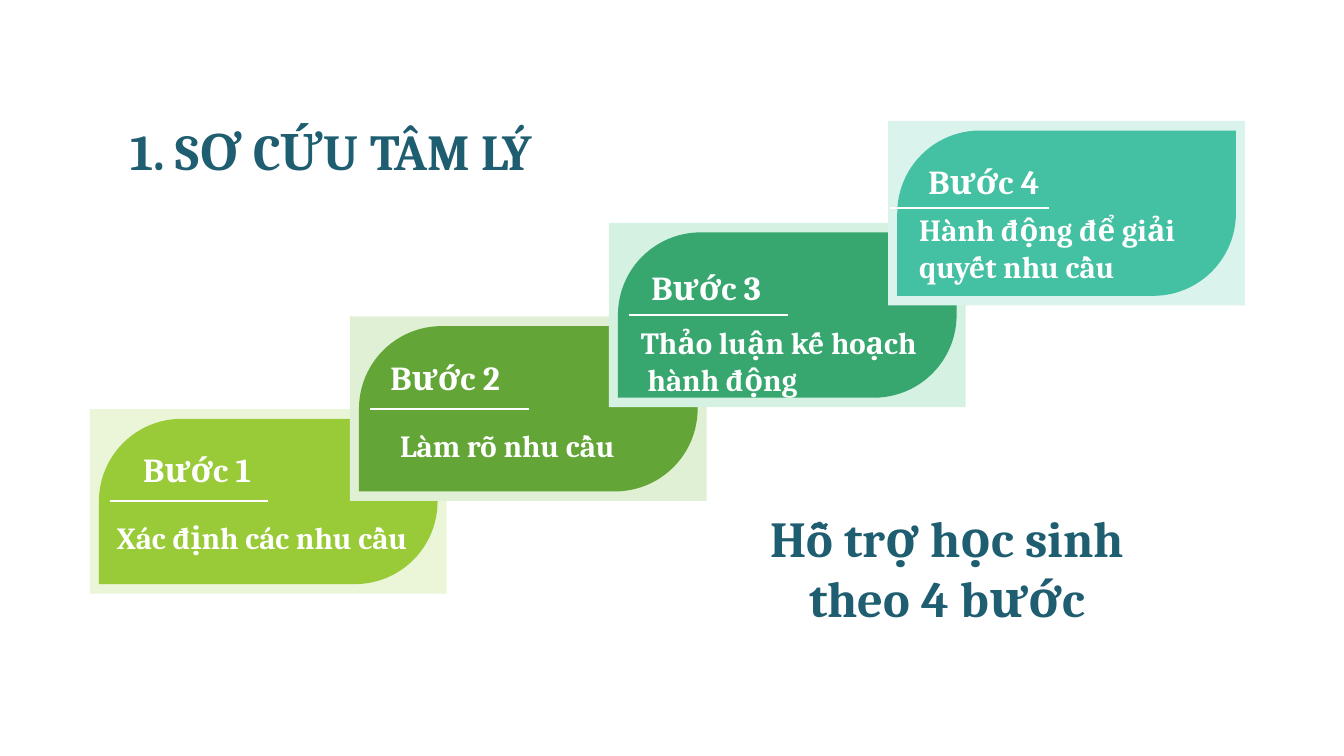
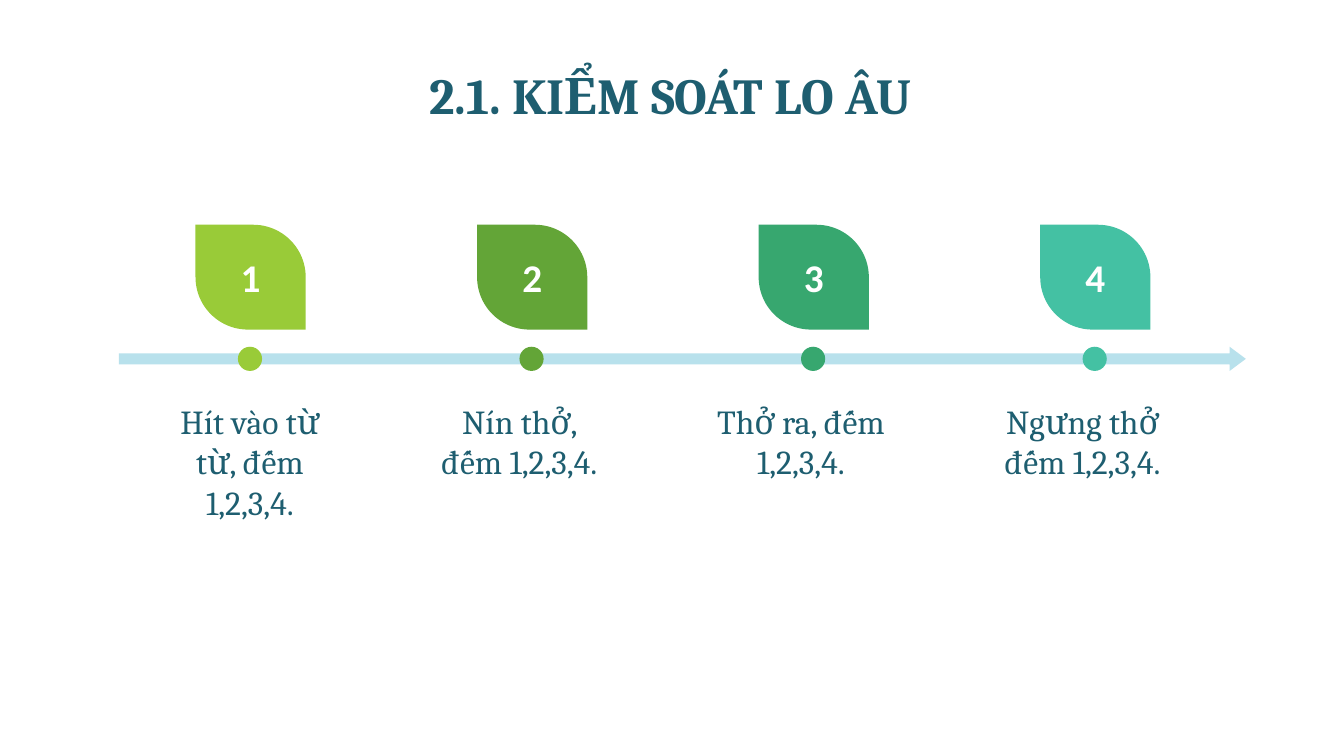
from dataclasses import dataclass

from lxml import etree
from pptx import Presentation
from pptx.dml.color import RGBColor
from pptx.enum.shapes import MSO_CONNECTOR, MSO_SHAPE
from pptx.enum.text import MSO_ANCHOR, PP_ALIGN
from pptx.oxml.ns import qn
from pptx.util import Inches, Pt

LEAF = MSO_SHAPE.ROUND_2_DIAG_RECTANGLE
DOT = MSO_SHAPE.OVAL
ARROW = MSO_SHAPE.RIGHT_ARROW
STRAIGHT = MSO_CONNECTOR.STRAIGHT
LEFT, CENTER = PP_ALIGN.LEFT, PP_ALIGN.CENTER
TOP, MIDDLE = MSO_ANCHOR.TOP, MSO_ANCHOR.MIDDLE


@dataclass(frozen=True)
class Theme:
    serif: str = "Cambria"
    sans: str = "Calibri"
    ink: str = "1E5E70"
    white: str = "FFFFFF"
    axis: str = "B8E1EC"
    steps: tuple = ("99CB38", "63A537", "37A76F", "44C1A3")
    panels: tuple = ("EBF5D7", "DFF0D4", "D4F1E2", "DAF3ED")
    title: int = 36
    number: int = 28
    label: int = 24
    body: int = 22


theme = Theme()
prs = Presentation()
prs.slide_width, prs.slide_height = Inches(13.33), Inches(7.5)
# All lengths below are percentages of the slide's width and height.
COL, ROW = prs.slide_width / 100, prs.slide_height / 100
BLANK = prs.slide_layouts[6]


def add_block(slide, kind, x, y, w, h, fill, adjustments=()):
    """Add a flat, unlined preset shape."""
    sp = slide.shapes.add_shape(kind, int(x * COL), int(y * ROW), int(w * COL), int(h * ROW))
    sp.shadow.inherit = False
    sp.fill.solid()
    sp.fill.fore_color.rgb = RGBColor.from_string(fill)
    sp.line.fill.background()
    for i, value in enumerate(adjustments):
        sp.adjustments[i] = value
    return sp


def add_text(slide, text, x, y, w, h, size, color, bold=True, align=CENTER, anchor=TOP):
    """Add a wrapped text box and return its text frame."""
    tf = slide.shapes.add_textbox(int(x * COL), int(y * ROW), int(w * COL), int(h * ROW)).text_frame
    tf.word_wrap = True
    tf.vertical_anchor = anchor
    tf.text = text
    for p in tf.paragraphs:
        p.alignment = align
        for r in p.runs:
            r.font.name, r.font.size, r.font.bold = theme.serif, Pt(size), bold
            r.font.color.rgb = RGBColor.from_string(color)
    return tf


# Titles
titles = [
    ("1. SƠ CỨU TÂM LÝ", 7.4, 15.07, 34.5),
    ("2.1. KIỂM SOÁT LO ÂU", 2.4, 7.73, 94.95),
]
for text, x, y, w in titles:
    slide = prs.slides.add_slide(BLANK)
    p = add_text(slide, text, x, y, w, 10.53, theme.title, theme.ink, anchor=MIDDLE).paragraphs[0]
    p.line_spacing = 0.9
    p.space_before = Pt(10)
staircase, timeline = prs.slides

# Staircase of four steps: panel corner, then label, rule and body offsets
cards = [
    ("Xác định các nhu cầu", (6.68, 54.13), (3.3, 4.93), (1.5, 12.2), (1.28, 13.87)),
    ("Làm rõ nhu cầu", (26.03, 41.87), (2.4, 5), (1.5, 12.2), (3, 13.87)),
    ("Thảo luận kế hoạch\n hành động", (45.3, 29.47), (2.55, 5.47), (1.5, 12.2), (1.65, 12.67)),
    ("Hành động để giải quyết nhu cầu", (66.08, 16), (2.44, 5), (0.15, 11.5), (1.58, 11.2)),
]
for i, (text, (x, y), label, rule, body) in enumerate(cards):
    add_block(staircase, LEAF, x, y, 26.55, 24.4, theme.panels[i], (0, 0))
    add_block(staircase, LEAF, x + 0.68, y + 1.27, 25.2, 21.87, theme.steps[i], (0.5, 0))

    tf = add_text(staircase, f"Bước {i + 1}", x + label[0], y + label[1], 9.38, 6,
                  theme.label, theme.white, anchor=MIDDLE)
    tf.margin_left = tf.margin_right = tf.margin_top = tf.margin_bottom = 0
    tf.paragraphs[0].space_before = Pt(5)

    left, level = int((x + rule[0]) * COL), int((y + rule[1]) * ROW)
    line = staircase.shapes.add_connector(STRAIGHT, left, level, left + int(11.8 * COL), level)
    line.line.color.rgb = RGBColor.from_string(theme.white)
    line.line.width = Pt(1.5)
    etree.SubElement(line._element.spPr, qn("a:effectLst"))

    add_text(staircase, text, x + body[0], y + body[1], 25.2, 11.2,
             theme.body, theme.white, align=LEFT)

add_text(staircase, "Hỗ trợ học sinh theo 4 bước", 54.3, 66.4, 32.33, 17.47,
         theme.title, theme.ink)

# Timeline of four breaths: caption text and its offset from the leaf
captions = [
    ("Hít vào từ từ, đếm 1,2,3,4.", -3),
    ("Nín thở, đếm 1,2,3,4.", -3.9),
    ("Thở ra, đếm 1,2,3,4.", -3.9),
    ("Ngưng thở đếm 1,2,3,4.", -3.9),
]
FIRST, PITCH = 14.55, 20.95
AXIS_TOP, AXIS_HEIGHT = 45.87, 3.2
add_block(timeline, ARROW, 8.85, AXIS_TOP, 83.85, AXIS_HEIGHT, theme.axis, (0.45, 0.67))
for i, (text, shift) in enumerate(captions):
    x = FIRST + i * PITCH
    tf = add_block(timeline, LEAF, x, 29.73, 8.2, 13.87, theme.steps[i], (0, 0.5)).text_frame
    tf.text = str(i + 1)
    tf.vertical_anchor = MIDDLE
    p = tf.paragraphs[0]
    p.alignment = CENTER
    r = p.runs[0]
    r.font.name, r.font.size, r.font.bold = theme.sans, Pt(theme.number), True
    r.font.color.rgb = RGBColor.from_string(theme.white)

    add_block(timeline, DOT, x + 3.15, AXIS_TOP, 1.8, AXIS_HEIGHT, theme.steps[i])
    add_text(timeline, text, x + shift, 52.4, 14.1, 17.47, theme.label, theme.ink, bold=False)

prs.save("out.pptx")
